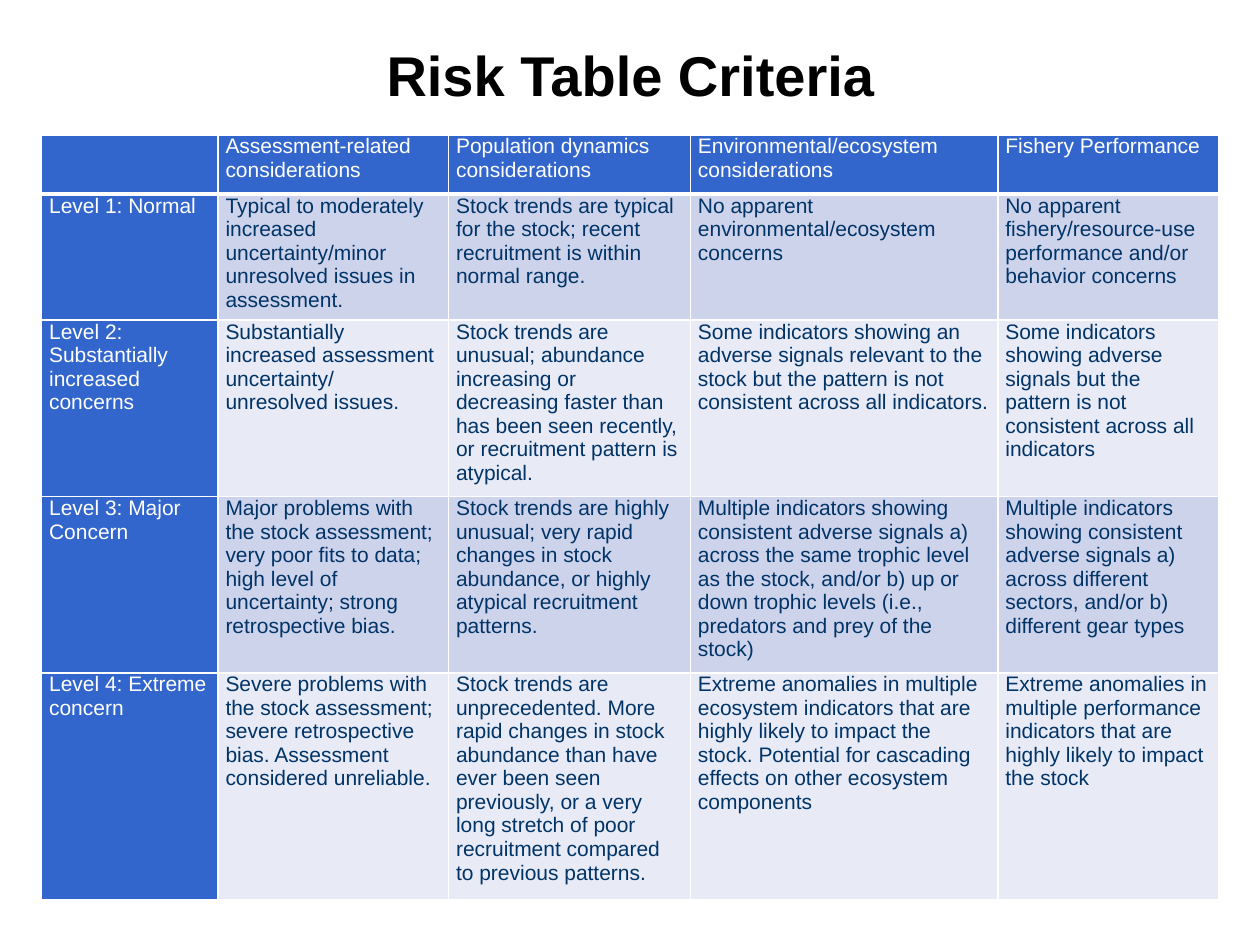
from lxml import etree
from pptx import Presentation
from pptx.dml.color import RGBColor
from pptx.enum import text
from pptx.oxml import ns
from pptx.util import Inches, Pt

FONT = "Arial"
BLACK = RGBColor(0x00, 0x00, 0x00)
WHITE = RGBColor(0xFF, 0xFF, 0xFF)
BLUE = RGBColor(0x33, 0x66, 0xCC)
NAVY = RGBColor(0x00, 0x33, 0x66)
BANDS = (RGBColor(0xCE, 0xD3, 0xEC), RGBColor(0xE8, 0xEA, 0xF6))

COLUMN_WIDTHS = (1.4, 1.83, 1.92, 2.44, 1.75)
ROW_HEIGHTS = (0.47, 1, 1.4, 1.4, 1.8)
CRITERIA = (
    ("",
     "Assessment-related considerations",
     "Population dynamics considerations",
     "Environmental/ecosystem considerations",
     "Fishery Performance"),
    ("Level 1: Normal",
     "Typical to moderately increased uncertainty/minor unresolved issues in assessment.",
     "Stock trends are typical for the stock; recent recruitment is within normal range.",
     "No apparent environmental/ecosystem concerns",
     "No apparent fishery/resource-use performance and/or behavior concerns"),
    ("Level 2: Substantially increased concerns",
     "Substantially increased assessment uncertainty/ unresolved issues.",
     "Stock trends are unusual; abundance increasing or decreasing faster than has been "
     "seen recently, or recruitment pattern is atypical.",
     "Some indicators showing an adverse signals relevant to the stock but the pattern "
     "is not consistent across all indicators.",
     "Some indicators showing adverse signals but the pattern is not consistent across "
     "all indicators"),
    ("Level 3: Major Concern",
     "Major problems with the stock assessment; very poor fits to data; high level of "
     "uncertainty; strong retrospective bias.",
     "Stock trends are highly unusual; very rapid changes in stock abundance, or highly "
     "atypical recruitment patterns.",
     "Multiple indicators showing consistent adverse signals a) across the same trophic "
     "level as the stock, and/or b) up or down trophic levels (i.e., predators and prey "
     "of the stock)",
     "Multiple indicators showing consistent adverse signals a) across different "
     "sectors, and/or b) different gear types"),
    ("Level 4: Extreme concern",
     "Severe problems with the stock assessment; severe retrospective bias. Assessment "
     "considered unreliable.",
     "Stock trends are unprecedented. More rapid changes in stock abundance than have "
     "ever been seen previously, or a very long stretch of poor recruitment compared to "
     "previous patterns.",
     "Extreme anomalies in multiple ecosystem indicators that are highly likely to "
     "impact the stock. Potential for cascading effects on other ecosystem components",
     "Extreme anomalies in multiple performance indicators that are highly likely to "
     "impact the stock"),
)


def add_run(paragraph, wording, size, color, bold=False):
    run = paragraph.add_run()
    run.text = wording
    run.font.name = FONT
    run.font.size = Pt(size)
    run.font.bold = bold
    run.font.color.rgb = color


def set_title(slide, wording):
    title = slide.shapes.title
    title.left, title.top = Inches(2.09), Inches(0.1)
    title.width, title.height = Inches(5.83), Inches(0.97)
    frame = title.text_frame
    frame.word_wrap = True
    frame.auto_size = text.MSO_AUTO_SIZE.NONE
    frame.vertical_anchor = text.MSO_ANCHOR.MIDDLE
    paragraph = frame.paragraphs[0]
    paragraph.alignment = text.PP_ALIGN.CENTER
    add_run(paragraph, wording, 32, BLACK, bold=True)


def set_borders(cell, bottom_width):
    properties = cell._tc.get_or_add_tcPr()
    widths = {"a:lnL": 1, "a:lnR": 1, "a:lnT": 1, "a:lnB": bottom_width}
    for position, (tag, width) in enumerate(widths.items()):
        line = etree.Element(ns.qn(tag), w=str(Pt(width)))
        fill = etree.SubElement(line, ns.qn("a:solidFill"))
        etree.SubElement(fill, ns.qn("a:srgbClr"), val=str(WHITE))
        properties.insert(position, line)


def format_cell(cell, wording, fill, color, bottom_width):
    cell.margin_left = cell.margin_right = Inches(0.06)
    cell.margin_top = cell.margin_bottom = 0
    cell.fill.solid()
    cell.fill.fore_color.rgb = fill
    set_borders(cell, bottom_width)
    if wording:
        add_run(cell.text_frame.paragraphs[0], wording, 12, color)


def add_criteria_table(slide):
    frame = slide.shapes.add_table(
        len(ROW_HEIGHTS), len(COLUMN_WIDTHS), Inches(0.33), Inches(1.07),
        Inches(sum(COLUMN_WIDTHS)), Inches(sum(ROW_HEIGHTS)))
    table = frame.table
    for column, width in zip(table.columns, COLUMN_WIDTHS):
        column.width = Inches(width)
    for row, height in zip(table.rows, ROW_HEIGHTS):
        row.height = Inches(height)
    for row_index, wordings in enumerate(CRITERIA):
        for column_index, wording in enumerate(wordings):
            is_heading = row_index == 0 or column_index == 0
            fill = BLUE if is_heading else BANDS[(row_index - 1) % 2]
            color = WHITE if is_heading else NAVY
            bottom_width = 3 if row_index == 0 else 1
            format_cell(table.cell(row_index, column_index), wording, fill, color, bottom_width)


def main():
    presentation = Presentation()
    presentation.slide_width, presentation.slide_height = Inches(10), Inches(7.5)
    slide = presentation.slides.add_slide(presentation.slide_layouts[5])
    set_title(slide, "Risk Table Criteria")
    add_criteria_table(slide)
    presentation.save("out.pptx")


if __name__ == "__main__":
    main()
